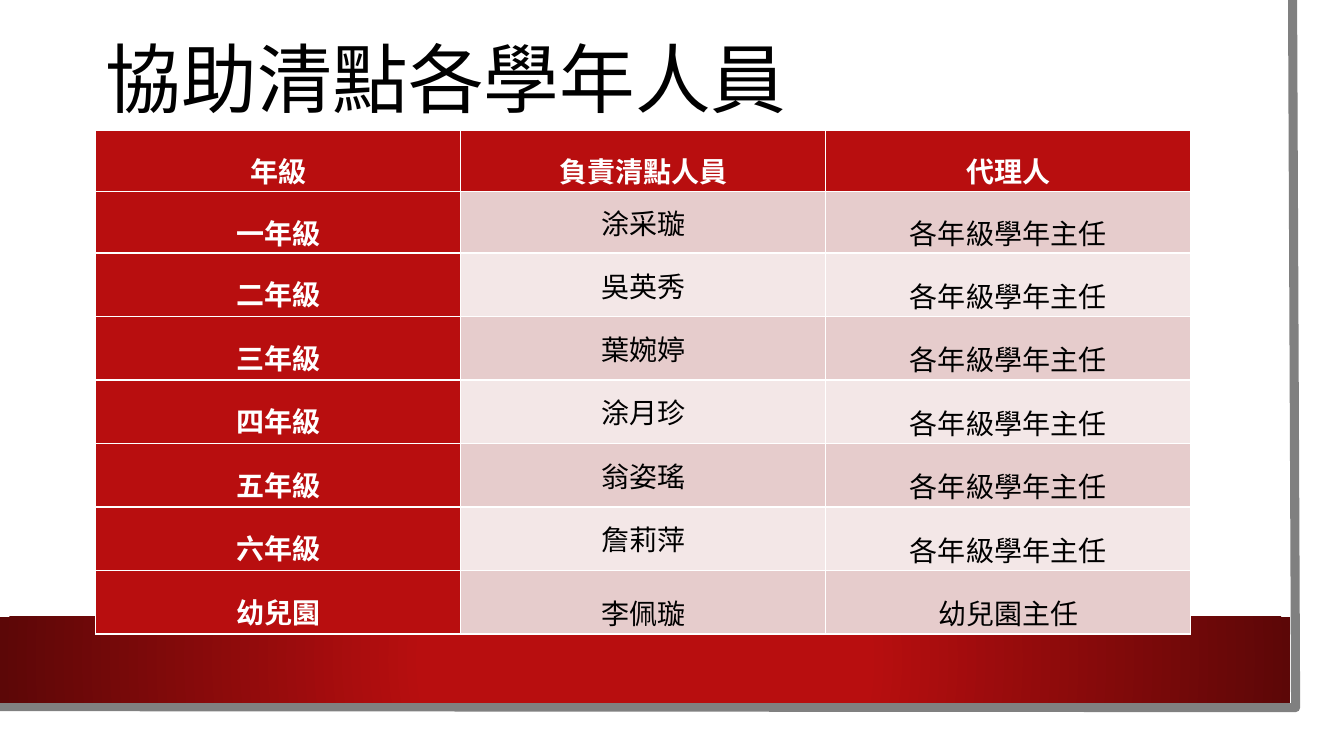
from pptx import Presentation
from pptx.dml.color import RGBColor
from pptx.enum.shapes import MSO_SHAPE as Shape
from pptx.enum.text import MSO_ANCHOR as Anchor, MSO_AUTO_SIZE as Fit, PP_ALIGN as Align
from pptx.oxml import parse_xml
from pptx.util import Inches, Pt

WHITE = RGBColor(0xFF, 0xFF, 0xFF)
BLACK = RGBColor(0, 0, 0)
GRAY = RGBColor(0x80, 0x80, 0x80)
RED = RGBColor(0xB8, 0x0E, 0x0F)
DARK = RGBColor(0x5C, 0x07, 0x07)
PINK = RGBColor(0xE6, 0xCC, 0xCC)
PALE = RGBColor(0xF3, 0xE7, 0xE7)
NS = "http://schemas.openxmlformats.org/drawingml/2006/main"


def add_rect(left, top, width, height):
    box = shapes.add_shape(Shape.RECTANGLE, Inches(left), Inches(top),
                           Inches(width), Inches(height))
    box.shadow.inherit = False
    box.line.fill.background()
    return box


def style(para, size, font, color, bold=False):
    for run in para.runs:
        run.font.size = Pt(size)
        run.font.name = font
        run.font.color.rgb = color
        run.font.bold = bold


deck = Presentation()
deck.slide_width = Inches(13.33)
deck.slide_height = Inches(7.5)
slide = deck.slides.add_slide(deck.slide_layouts[5])
shapes = slide.shapes

# White page with a gray edge
page = add_rect(0, 0, 13.1, 7.27)
page.fill.solid()
page.fill.fore_color.rgb = WHITE

pen = shapes.build_freeform(Inches(12.82), 0)
pen.add_line_segments([(Inches(12.85), Inches(7.02)),
                       (Inches(-0.03), Inches(7.01))], close=False)
edge = pen.convert_to_shape()
edge.shadow.inherit = False
edge.fill.background()
edge.line.color.rgb = GRAY
edge.line.width = Pt(6.5)

# Red band, dark at both ends
band = add_rect(0, 6.12, 12.8, 0.85)
band.fill.background()
props = band.fill._xPr
props.replace(props.find(f"{{{NS}}}noFill"), parse_xml(
    f'<a:gradFill xmlns:a="{NS}" rotWithShape="1"><a:gsLst>'
    f'<a:gs pos="34000"><a:srgbClr val="{RED}"/></a:gs>'
    f'<a:gs pos="100000"><a:srgbClr val="{DARK}"/></a:gs></a:gsLst>'
    '<a:path path="circle">'
    '<a:fillToRect l="50000" t="50000" r="50000" b="50000"/>'
    '</a:path></a:gradFill>'))

# Title, raised above the page
title = shapes.title
shapes._spTree.append(title._element)
title.left, title.top = Inches(0.95), Inches(0.19)
title.width, title.height = Inches(11.37), Inches(1.26)
frame = title.text_frame
frame.text = "協助清點各學年人員"
frame.auto_size = Fit.NONE
frame.vertical_anchor = Anchor.MIDDLE
head = frame.paragraphs[0]
head.alignment = Align.LEFT
head.line_spacing = 0.9
style(head, 54, "Calibri", BLACK)

# Staff table
staff = [("一年級", "涂采璇"), ("二年級", "吳英秀"), ("三年級", "葉婉婷"),
         ("四年級", "涂月珍"), ("五年級", "翁姿瑤"), ("六年級", "詹莉萍")]
rows = [("年級", "負責清點人員", "代理人")]
rows += [(grade, name, "各年級學年主任") for grade, name in staff]
rows += [("幼兒園", "李佩璇", "幼兒園主任")]

table = shapes.add_table(len(rows), 3, Inches(0.95), Inches(1.29),
                         Inches(10.87), Inches(4.98)).table
table.first_col = True
for col in table.columns:
    col.width = Inches(3.62)

for r, row in enumerate(rows):
    table.rows[r].height = Inches(0.61 if r < 2 else 0.63)
    for c, text in enumerate(row):
        cell = table.cell(r, c)
        label = r == 0 or c == 0
        cell.margin_left = cell.margin_right = Inches(0.07)
        cell.margin_top = cell.margin_bottom = 0
        cell.vertical_anchor = Anchor.TOP if label else Anchor.MIDDLE
        cell.fill.solid()
        cell.fill.fore_color.rgb = RED if label else PINK if r % 2 else PALE
        para = cell.text_frame.paragraphs[0]
        para.text = text
        para.alignment = Align.CENTER
        if c != 1 or r in (0, len(rows) - 1):
            para.line_spacing = 1.5
        font = "Calibri" if r == 0 else "Arial" if text == "翁姿瑤" else "Arial Narrow"
        style(para, 20, font, WHITE if label else BLACK, label)

deck.save("out.pptx")
